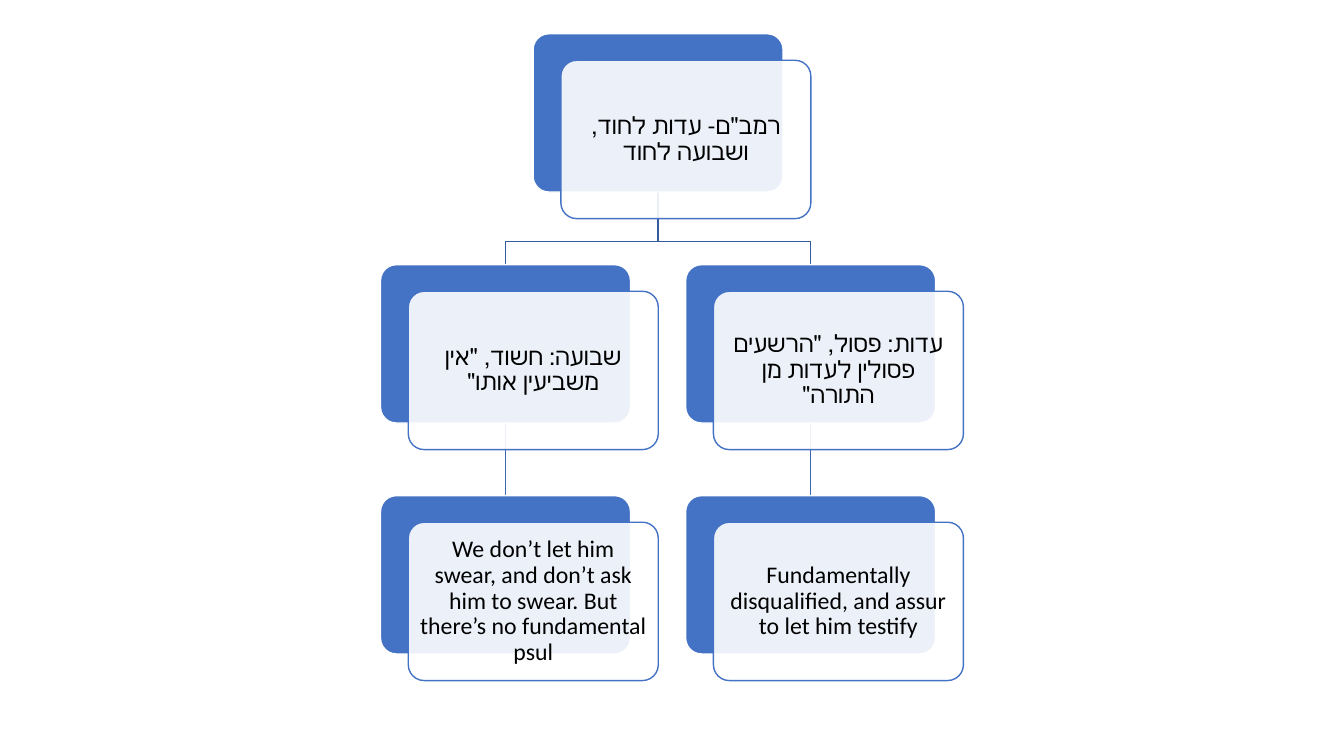
from lxml import etree
from pptx import Presentation
from pptx.dml.color import RGBColor
from pptx.enum.shapes import MSO_CONNECTOR, MSO_SHAPE
from pptx.enum.text import MSO_ANCHOR, PP_ALIGN
from pptx.oxml.ns import qn
from pptx.util import Cm, Pt

ROUNDED = MSO_SHAPE.ROUNDED_RECTANGLE
STRAIGHT = MSO_CONNECTOR.STRAIGHT
MIDDLE = MSO_ANCHOR.MIDDLE
CENTER = PP_ALIGN.CENTER

BLUE, WHITE, BLACK = "4472C4", "FFFFFF", "000000"
BRANCH_COLOR, STEM_COLOR = "365B9D", "3E67B2"

# Lengths in centimetres
CARD_WIDTH, CARD_HEIGHT = 6.3, 3.99
SHIFT_X, SHIFT_Y = 0.7, 0.67
LEFT_X, RIGHT_X = 9.59, 17.28
ROOT_X = (LEFT_X + RIGHT_X) / 2
ROW_TOPS = [0.85 + 5.82 * row for row in range(3)]
BEND_GAP = 0.58

ROOT_TEXT = 'רמב"ם- עדות לחוד, ושבועה לחוד'
COLUMNS = [
    (RIGHT_X, ['עדות: פסול, "הרשעים פסולין לעדות מן התורה"',
               "Fundamentally disqualified, and assur to let him testify"]),
    (LEFT_X, ['שבועה: חשוד, "אין משביעין אותו"',
              "We don’t let him swear, and don’t ask him to swear. "
              "But there’s no fundamental psul"]),
]


def color(hex_string):
    return RGBColor.from_string(hex_string)


def set_line(shape, line_color):
    shape.line.color.rgb = color(line_color)
    shape.line.width = Pt(1)


def add_panel(slide, left, top, fill_color, line_color):
    panel = slide.shapes.add_shape(
        ROUNDED, Cm(left), Cm(top), Cm(CARD_WIDTH), Cm(CARD_HEIGHT))
    panel.adjustments[0] = 0.1
    panel.shadow.inherit = False
    panel.fill.solid()
    panel.fill.fore_color.rgb = color(fill_color)
    set_line(panel, line_color)
    return panel


def set_opacity(shape, percent):
    fill_value = shape.fill._xPr.find(qn("a:solidFill"))[0]
    alpha = etree.SubElement(fill_value, qn("a:alpha"))
    alpha.set("val", str(percent * 1000))


def write_label(shape, text):
    frame = shape.text_frame
    frame.word_wrap = True
    frame.vertical_anchor = MIDDLE
    frame.margin_left = frame.margin_right = Cm(0.17)
    frame.margin_top = frame.margin_bottom = Cm(0.17)
    frame.text = text
    para = frame.paragraphs[0]
    para.alignment = CENTER
    para.line_spacing = 0.9
    para._p.get_or_add_pPr().set("rtl", "1")
    font = para.runs[0].font
    font.name = "Calibri"
    font.size = Pt(17)
    font.color.rgb = color(BLACK)


def add_card(slide, left, top, text):
    """Add a blue panel with a translucent labelled panel shifted over it."""
    add_panel(slide, left, top, BLUE, WHITE)
    front = add_panel(slide, left + SHIFT_X, top + SHIFT_Y, WHITE, BLUE)
    set_opacity(front, 90)
    write_label(front, text)


def add_stem(slide, x, top, bottom):
    stem = slide.shapes.add_connector(
        STRAIGHT, Cm(x), Cm(top), Cm(x), Cm(bottom))
    set_line(stem, STEM_COLOR)
    etree.SubElement(stem._element.spPr, qn("a:effectLst"))


def add_branch(slide, start_x, start_y, end_x, end_y):
    """Draw a bent line from a parent down to a child beside it."""
    bend_y = end_y - BEND_GAP
    points = [(start_x, bend_y), (end_x, bend_y), (end_x, end_y)]
    builder = slide.shapes.build_freeform(Cm(start_x), Cm(start_y))
    builder.add_line_segments([(Cm(x), Cm(y)) for x, y in points], close=False)
    branch = builder.convert_to_shape()
    branch.shadow.inherit = False
    branch.fill.background()
    set_line(branch, BRANCH_COLOR)


def main():
    deck = Presentation()
    deck.slide_width, deck.slide_height = Cm(33.87), Cm(19.05)
    slide = deck.slides.add_slide(deck.slide_layouts[6])

    root_top, child_top, leaf_top = ROW_TOPS
    half = CARD_WIDTH / 2
    for left, _ in COLUMNS:
        add_stem(slide, left + half, child_top + CARD_HEIGHT, leaf_top)
        add_branch(slide, ROOT_X + half, root_top + CARD_HEIGHT,
                   left + half, child_top)

    add_card(slide, ROOT_X, root_top, ROOT_TEXT)
    for left, texts in COLUMNS:
        for top, text in zip(ROW_TOPS[1:], texts):
            add_card(slide, left, top, text)
    deck.save("out.pptx")


if __name__ == "__main__":
    main()
